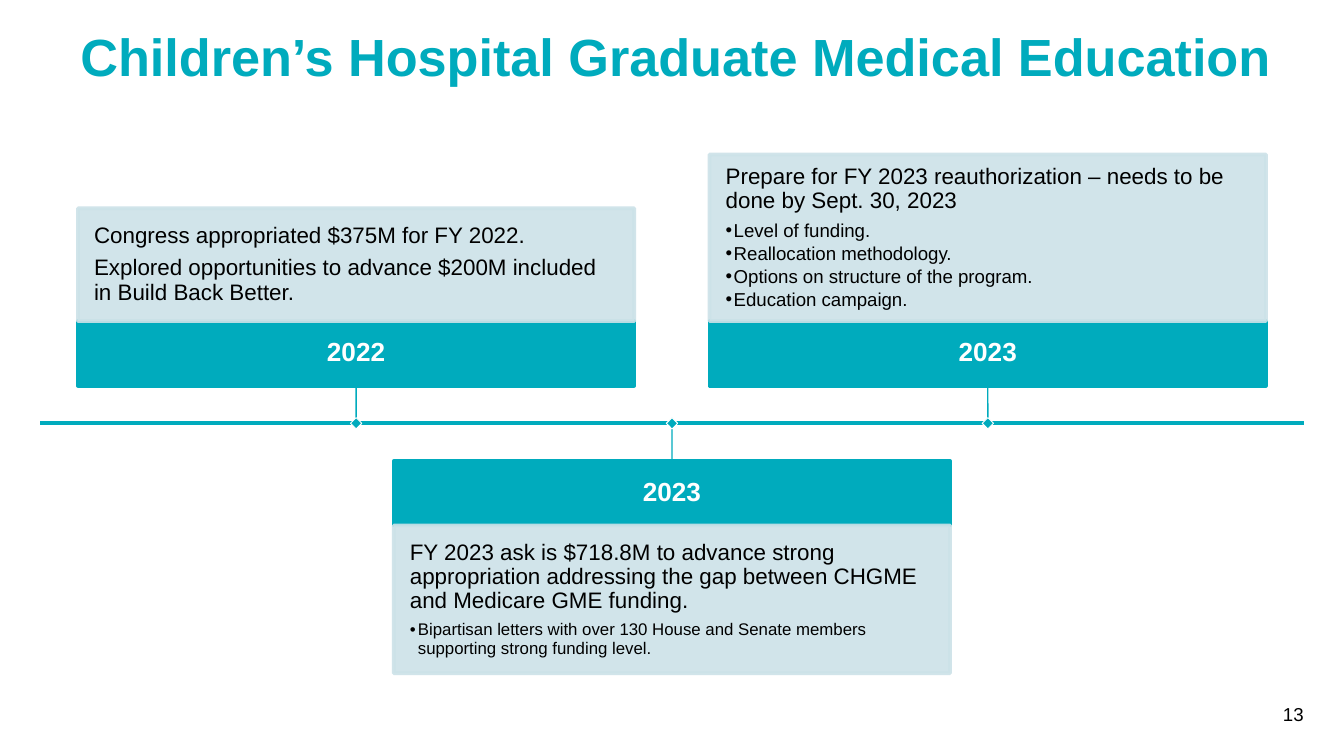
from dataclasses import dataclass

from lxml.etree import SubElement
from pptx import Presentation
from pptx.dml.color import RGBColor
from pptx.enum.shapes import MSO_CONNECTOR, MSO_SHAPE
from pptx.enum.text import MSO_ANCHOR as Anchor, MSO_AUTO_SIZE as AutoSize, PP_ALIGN as Align
from pptx.oxml.ns import qn
from pptx.util import Inches, Pt


@dataclass(frozen=True)
class Theme:
    font: str = "Arial"
    teal: RGBColor = RGBColor.from_string("00ABBD")
    pale: RGBColor = RGBColor.from_string("CCE2E8")
    white: RGBColor = RGBColor.from_string("FFFFFF")
    black: RGBColor = RGBColor.from_string("000000")
    title: int = 28
    year: int = 14
    body: int = 12
    number: int = 10


@dataclass(frozen=True)
class Box:
    left: float
    top: float
    width: float
    height: float

    @property
    def lengths(self):
        return [Inches(n) for n in (self.left, self.top, self.width, self.height)]


@dataclass(frozen=True)
class Milestone:
    year: str
    above: bool
    height: float
    statements: tuple
    bullets: tuple = ()
    bullet_size: int = 10


THEME = Theme()
AXIS = Box(0.3, 3.15, 9.4, 0)
CARD_WIDTH, BAND_HEIGHT, STEM, MARKER = 4.14, 0.48, 0.28, 0.06
FIRST_MIDDLE, STEP = 2.65, 2.35

MILESTONES = (
    Milestone("2022", True, 0.84, (
        "Congress appropriated $375M for FY 2022.",
        "Explored opportunities to advance $200M included in Build Back Better.")),
    Milestone("2023", False, 1.1, (
        "FY 2023 ask is $718.8M to advance strong appropriation addressing "
        "the gap between CHGME and Medicare GME funding.",),
        ("Bipartisan letters with over 130 House and Senate members "
         "supporting strong funding level.",), 9),
    Milestone("2023", True, 1.24, (
        "Prepare for FY 2023 reauthorization – needs to be done by Sept. 30, 2023",),
        ("Level of funding.", "Reallocation methodology.",
         "Options on structure of the program.", "Education campaign.")),
)


def apply(target, formats):
    for name, value in formats.items():
        setattr(target, name, value)


def set_frame(frame, anchor, left=0, other=0):
    apply(frame, dict(auto_size=AutoSize.NONE, word_wrap=True, vertical_anchor=anchor,
                      margin_left=Inches(left), margin_top=Inches(other),
                      margin_right=Inches(other), margin_bottom=Inches(other)))


def write(para, text, size, color, align=Align.LEFT, bold=False, after=0, spacing=0.9):
    apply(para, dict(alignment=align, line_spacing=spacing,
                     space_before=Pt(0), space_after=Pt(after)))
    span = para.add_run()
    span.text = text
    apply(span.font, dict(name=THEME.font, size=Pt(size), bold=bold))
    span.font.color.rgb = color


def add_bullet(para):
    props = para._p.get_or_add_pPr()
    para.level = 1
    props.set("marL", str(Inches(0.06)))
    props.set("indent", str(-Inches(0.06)))
    SubElement(props, qn("a:buFont"), typeface=THEME.font)
    SubElement(props, qn("a:buChar"), char="•")


def add_rectangle(page, box, fill, line, weight, alpha=None):
    shape = page.shapes.add_shape(MSO_SHAPE.RECTANGLE, *box.lengths)
    shape.shadow.inherit = False
    shape.fill.solid()
    shape.fill.fore_color.rgb = fill
    shape.line.color.rgb = line
    shape.line.width = Pt(weight)
    if alpha:
        for color in shape._element.spPr.iter(qn("a:srgbClr")):
            SubElement(color, qn("a:alpha"), val=str(alpha * 1000))
    return shape


def add_line(page, start, end, weight):
    points = [Inches(n) for n in (*start, *end)]
    line = page.shapes.add_connector(MSO_CONNECTOR.STRAIGHT, *points)
    line.line.color.rgb = THEME.teal
    line.line.width = Pt(weight)
    SubElement(line._element.spPr, qn("a:effectLst"))
    return line


def add_title(page, box, text):
    title = page.shapes.title
    title.left, title.top, title.width, title.height = box.lengths
    set_frame(title.text_frame, Anchor.TOP, left=0.05)
    write(title.text_frame.paragraphs[0], text, THEME.title, THEME.teal, Align.CENTER, True)


def add_page_number(page, box, number):
    frame = page.shapes.add_textbox(*box.lengths).text_frame
    set_frame(frame, Anchor.BOTTOM)
    write(frame.paragraphs[0], number, THEME.number, THEME.black, Align.RIGHT, spacing=1.0)


def add_year_band(page, box, year):
    band = add_rectangle(page, box, THEME.teal, THEME.teal, 2)
    set_frame(band.text_frame, Anchor.MIDDLE, 0.08, 0.08)
    write(band.text_frame.paragraphs[0], year, THEME.year, THEME.white, Align.CENTER, True)
    return band


def add_details(page, box, milestone):
    panel = add_rectangle(page, box, THEME.pale, THEME.pale, 2, alpha=90)
    frame = panel.text_frame
    set_frame(frame, Anchor.MIDDLE, 0.12, 0.12)
    entries = [(text, False) for text in milestone.statements]
    entries += [(text, True) for text in milestone.bullets]
    for index, (text, bulleted) in enumerate(entries):
        para = frame.add_paragraph() if index else frame.paragraphs[0]
        if bulleted:
            add_bullet(para)
        size = milestone.bullet_size if bulleted else THEME.body
        after = size * (0.15 if bulleted else 0.35)
        write(para, text, size, THEME.black, after=after)


def add_milestone(page, axis, middle, milestone):
    """Stack band and details away from the axis, then tie them to it."""
    left = middle - CARD_WIDTH / 2
    if milestone.above:
        stem_start, side = axis.top - STEM, 2
        band_top = stem_start - BAND_HEIGHT
        details_top = band_top - milestone.height
    else:
        stem_start, side = axis.top + STEM, 0
        band_top = stem_start
        details_top = band_top + BAND_HEIGHT
    band = add_year_band(page, Box(left, band_top, CARD_WIDTH, BAND_HEIGHT), milestone.year)
    add_details(page, Box(left, details_top, CARD_WIDTH, milestone.height), milestone)
    stem = add_line(page, (middle, stem_start), (middle, axis.top), 0.75)
    stem.begin_connect(band, side)
    marker_box = Box(middle - MARKER / 2, axis.top - MARKER / 2, MARKER, MARKER)
    add_rectangle(page, marker_box, THEME.teal, THEME.white, 0.5).rotation = 45


def add_timeline(page, axis, milestones):
    add_line(page, (axis.left, axis.top), (axis.left + axis.width, axis.top), 2)
    for index, milestone in enumerate(milestones):
        add_milestone(page, axis, FIRST_MIDDLE + index * STEP, milestone)


def main():
    deck = Presentation()
    deck.slide_width = Inches(10)
    deck.slide_height = deck.slide_width * 9 // 16
    page = deck.slides.add_slide(deck.slide_layouts[5])
    add_title(page, Box(0.3, 0.23, 9.4, 0.46), "Children’s Hospital Graduate Medical Education")
    add_timeline(page, AXIS, MILESTONES)
    add_page_number(page, Box(9, 5.21, 0.7, 0.19), "13")
    deck.save("out.pptx")


if __name__ == "__main__":
    main()
